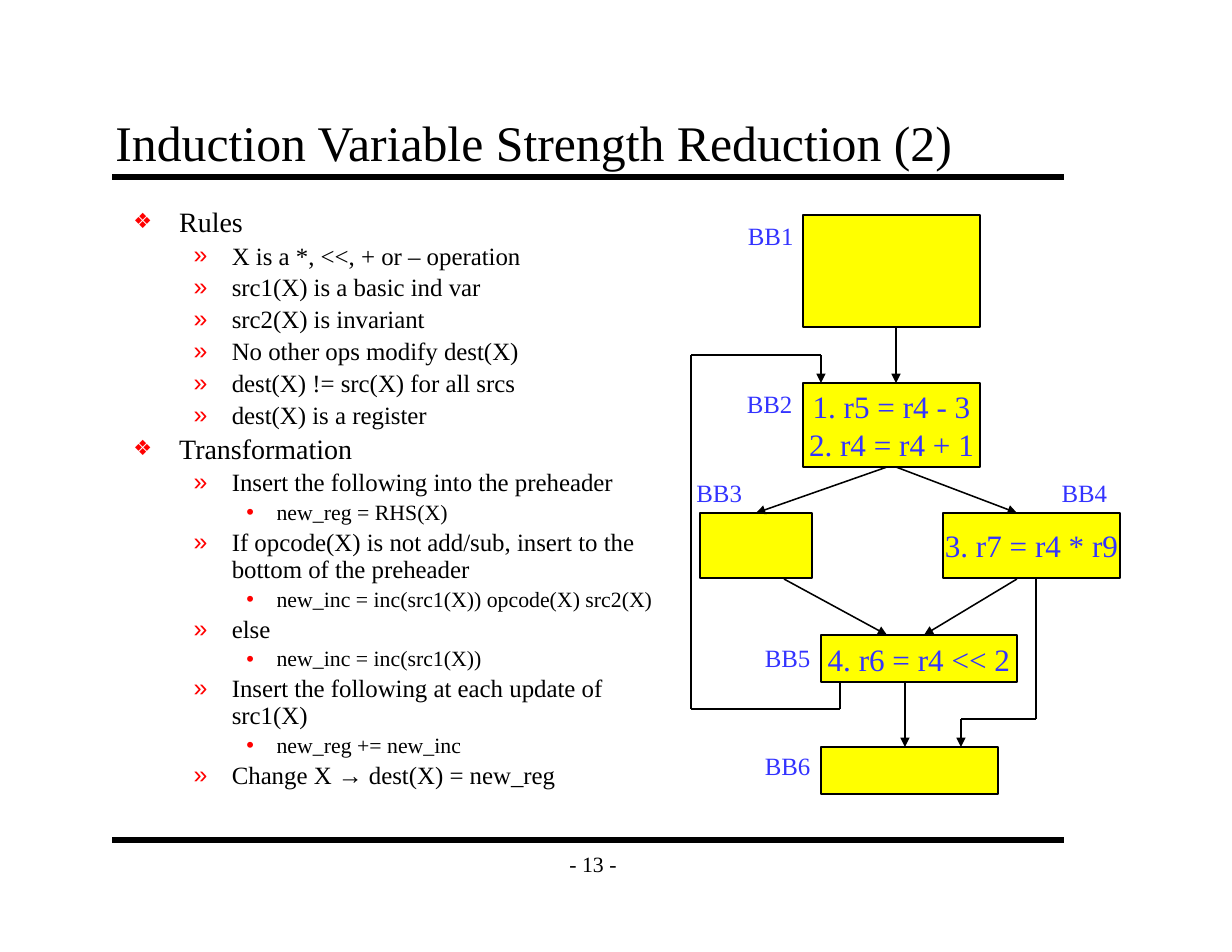
"""Build the slide on induction variable strength reduction with its control flow graph."""
from dataclasses import dataclass
from itertools import pairwise

from lxml.etree import SubElement
from pptx import Presentation
from pptx.dml.color import RGBColor
from pptx.enum.shapes import MSO_CONNECTOR, MSO_SHAPE
from pptx.enum.text import MSO_ANCHOR, MSO_AUTO_SIZE, PP_ALIGN
from pptx.oxml.ns import qn
from pptx.util import Inches, Pt

FONT = "Times New Roman"
BLACK, BLUE, YELLOW, RED = "000000", "3333FF", "FFFF00", "FF0000"


@dataclass(frozen=True)
class Level:
    bullet: str
    bullet_percent: int
    size: int
    margin: float
    indent: float


@dataclass(frozen=True)
class Block:
    name: str
    left: float
    top: float
    width: float
    height: float
    label_left: float
    label_top: float
    code: tuple[str, ...] = ()


LEVELS = (
    Level("❖", 75, 18, 0.41, -0.41),
    Level("»", 100, 16, 0.88, -0.34),
    Level("•", 100, 14, 1.28, -0.27),
)

OUTLINE = (
    (0, "Rules"),
    (1, "X is a *, <<, + or – operation"),
    (1, "src1(X) is a basic ind var"),
    (1, "src2(X) is invariant"),
    (1, "No other ops modify dest(X)"),
    (1, "dest(X) != src(X) for all srcs"),
    (1, "dest(X) is a register"),
    (0, "Transformation"),
    (1, "Insert the following into the preheader"),
    (2, "new_reg = RHS(X)"),
    (1, "If opcode(X) is not add/sub, insert to the bottom of the preheader"),
    (2, "new_inc = inc(src1(X)) opcode(X) src2(X)"),
    (1, "else"),
    (2, "new_inc = inc(src1(X))"),
    (1, "Insert the following at each update of src1(X)"),
    (2, "new_reg += new_inc"),
    (1, "Change X → dest(X) = new_reg"),
)

BLOCKS = (
    Block("BB1", 7.17, 1.92, 1.58, 1, 6.58, 1.92),
    Block("BB2", 7.17, 3.42, 1.58, 0.75, 6.57, 3.42, ("1. r5 = r4 - 3", "2. r4 = r4 + 1")),
    Block("BB3", 6.25, 4.58, 1, 0.58, 6.12, 4.22),
    Block("BB4", 8.42, 4.58, 1.58, 0.58, 9.38, 4.22, ("3. r7 = r4 * r9",)),
    Block("BB5", 7.33, 5.67, 1.75, 0.42, 6.73, 5.69, ("4. r6 = r4 << 2",)),
    Block("BB6", 7.33, 6.67, 1.58, 0.42, 6.73, 6.65),
)

ROUTES = (
    ((8, 2.92), (8, 3.42)),
    ((7.92, 4.17), (6.75, 4.58)),
    ((8, 4.17), (9.08, 4.58)),
    ((7, 5.17), (7.92, 5.67)),
    ((9.08, 5.17), (8.25, 5.67)),
    ((8.08, 6.08), (8.08, 6.67)),
    ((7.5, 6.08), (7.5, 6.33), (6.17, 6.33), (6.17, 3.17), (7.33, 3.17), (7.33, 3.42)),
    ((9.25, 5.17), (9.25, 6.42), (8.58, 6.42), (8.58, 6.67)),
)


def color(value: str) -> RGBColor:
    """Turn a hex string into a colour."""
    return RGBColor.from_string(value)


def place(shape, left: float, top: float, width: float, height: float) -> None:
    """Move and size a shape in inches."""
    shape.left, shape.top = Inches(left), Inches(top)
    shape.width, shape.height = Inches(width), Inches(height)


def add_run(paragraph, text: str, size: int, hue: str = BLACK) -> None:
    """Add one formatted run to a paragraph."""
    run = paragraph.add_run()
    run.text = text
    run.font.name, run.font.size = FONT, Pt(size)
    run.font.color.rgb = color(hue)


def set_insets(frame) -> None:
    """Give a text frame the wide insets of the page furniture."""
    frame.margin_left = frame.margin_right = Inches(0.11)
    frame.margin_top = frame.margin_bottom = Inches(0.06)


def set_bullet(paragraph, level: Level) -> None:
    """Set the indent and the red bullet of a paragraph."""
    properties = paragraph._p.get_or_add_pPr()
    properties.set("marL", str(Inches(level.margin)))
    properties.set("indent", str(Inches(level.indent)))
    bullet_color = SubElement(properties, qn("a:buClr"))
    SubElement(bullet_color, qn("a:srgbClr"), val=RED)
    SubElement(properties, qn("a:buSzPct"), val=str(level.bullet_percent * 1000))
    SubElement(properties, qn("a:buChar"), char=level.bullet)


def add_line(slide, start: tuple, end: tuple, weight: float = 1, arrow: bool = False) -> None:
    """Draw a black line, with an arrowhead at its end if asked."""
    line = slide.shapes.add_connector(MSO_CONNECTOR.STRAIGHT, *map(Inches, start + end))
    line.line.width = Pt(weight)
    line.line.color.rgb = color(BLACK)
    if arrow:
        SubElement(line.line._get_or_add_ln(), qn("a:tailEnd"), type="triangle")
    SubElement(line._element.spPr, qn("a:effectLst"))


def add_label(slide, text: str, left: float, top: float, width: float, height: float):
    """Add an unwrapped text box and return its frame and paragraph."""
    frame = slide.shapes.add_textbox(*map(Inches, (left, top, width, height))).text_frame
    frame.word_wrap = False
    return frame, frame.paragraphs[0]


def add_block(slide, block: Block) -> None:
    """Draw a basic block with its code."""
    bounds = map(Inches, (block.left, block.top, block.width, block.height))
    box = slide.shapes.add_shape(MSO_SHAPE.RECTANGLE, *bounds)
    box.shadow.inherit = False
    box.fill.solid()
    box.fill.fore_color.rgb = color(YELLOW)
    box.line.color.rgb = color(BLACK)
    box.line.width = Pt(1)
    frame = box.text_frame
    frame.word_wrap = False
    frame.vertical_anchor = MSO_ANCHOR.MIDDLE
    for index, instruction in enumerate(block.code):
        paragraph = frame.add_paragraph() if index else frame.paragraphs[0]
        paragraph.alignment = PP_ALIGN.CENTER
        add_run(paragraph, instruction, 20, BLUE)


def add_block_name(slide, block: Block) -> None:
    """Write the name of a basic block beside it."""
    frame, paragraph = add_label(slide, block.name, block.label_left, block.label_top, 0.61, 0.37)
    frame.auto_size = MSO_AUTO_SIZE.SHAPE_TO_FIT_TEXT
    add_run(paragraph, block.name, 16, BLUE)


def fill_title(title) -> None:
    """Place and write the slide title."""
    place(title, 0.92, 0.92, 8.5, 0.67)
    frame = title.text_frame
    set_insets(frame)
    frame.auto_size = MSO_AUTO_SIZE.NONE
    frame.vertical_anchor = MSO_ANCHOR.BOTTOM
    frame.paragraphs[0].alignment = PP_ALIGN.LEFT
    add_run(frame.paragraphs[0], "Induction Variable Strength Reduction (2)", 32)


def fill_outline(body) -> None:
    """Place and write the bulleted outline."""
    place(body, 1.08, 1.8, 5.08, 5.7)
    frame = body.text_frame
    set_insets(frame)
    frame.auto_size = MSO_AUTO_SIZE.NONE
    for index, (depth, text) in enumerate(OUTLINE):
        paragraph = frame.add_paragraph() if index else frame.paragraphs[0]
        paragraph.level = depth
        paragraph.line_spacing = 0.9
        set_bullet(paragraph, LEVELS[depth])
        add_run(paragraph, text, LEVELS[depth].size)


def main() -> None:
    """Build and save the slide."""
    deck = Presentation()
    deck.slide_width, deck.slide_height = Inches(11), Inches(8.5)
    slide = deck.slides.add_slide(deck.slide_layouts[1])
    for rule_top in (1.58, 7.5):
        add_line(slide, (1, rule_top), (9.5, rule_top), 4)
    frame, paragraph = add_label(slide, "- 13 -", 4.92, 7.5, 0.75, 0.42)
    set_insets(frame)
    frame.vertical_anchor = MSO_ANCHOR.MIDDLE
    paragraph.alignment = PP_ALIGN.CENTER
    add_run(paragraph, "- 13 -", 14)
    fill_title(slide.shapes.title)
    fill_outline(slide.placeholders[1])
    for block in BLOCKS:
        add_block(slide, block)
    for route in ROUTES:
        for start, end in pairwise(route):
            add_line(slide, start, end, arrow=end == route[-1])
    for block in BLOCKS:
        add_block_name(slide, block)
    deck.save("out.pptx")


if __name__ == "__main__":
    main()
